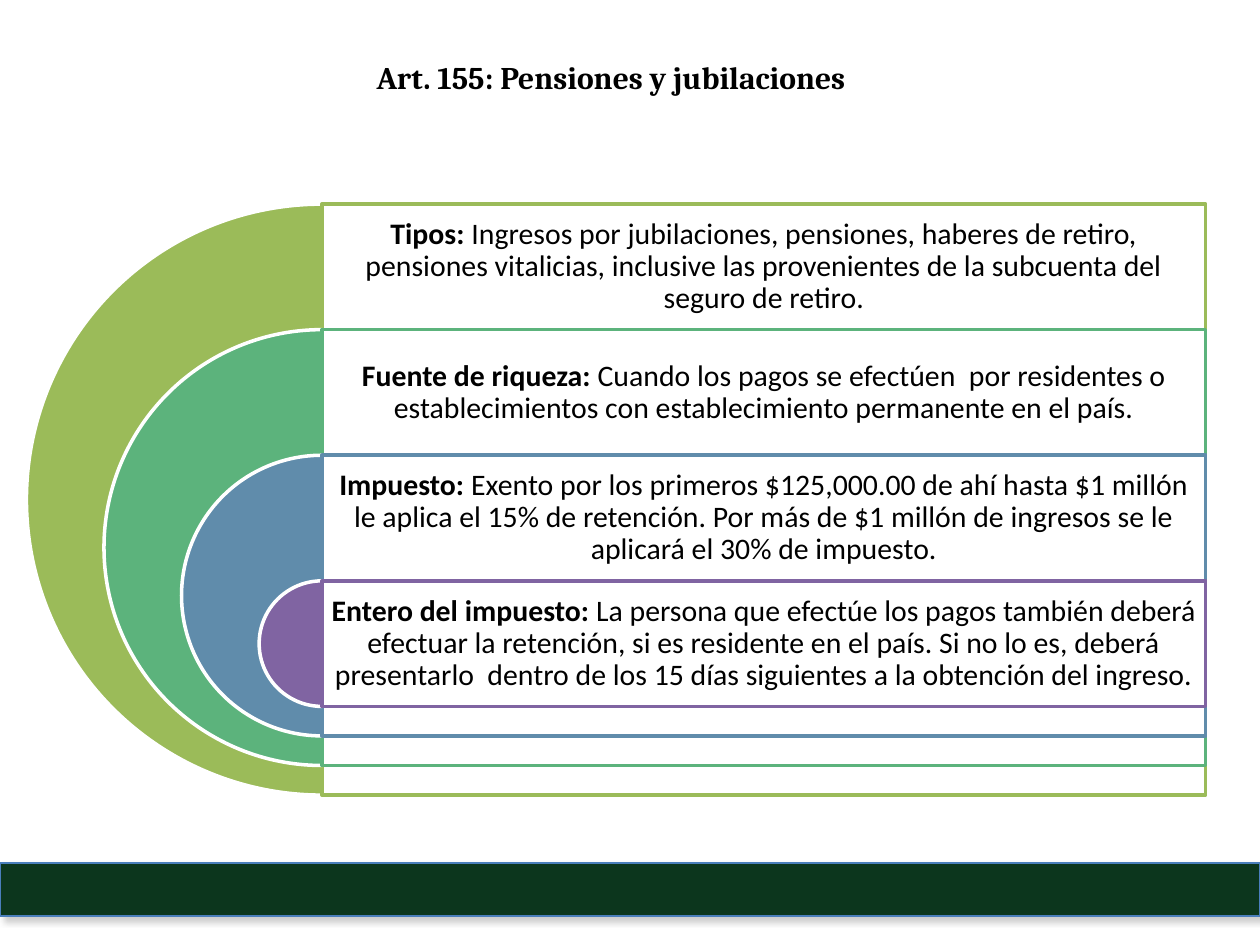
import pptx
import pptx.dml.color
import pptx.enum.shapes
import pptx.enum.text
import pptx.oxml
import pptx.oxml.ns
import pptx.util
from pptx.util import Inches

COLORS = {
    "bar": "0C361D", "bar_line": "4A7EBB", "shadow": "808080",
    "white": "FFFFFF", "text": "000000",
    "types": "9BBB59", "source": "5CB37C", "tax": "608CAB", "payment": "8064A2",
}
RINGS = [
    ("types", "Tipos: ", "Ingresos por jubilaciones, pensiones, haberes de retiro, "
     "pensiones vitalicias, inclusive las provenientes de la subcuenta del seguro de retiro."),
    ("source", "Fuente de riqueza: ", "Cuando los pagos se efectúen  por residentes o "
     "establecimientos con establecimiento permanente en el país."),
    ("tax", "Impuesto: ", "Exento por los primeros $125,000.00 de ahí hasta $1 millón le "
     "aplica el 15% de retención. Por más de $1 millón de ingresos se le aplicará el 30% "
     "de impuesto."),
    ("payment", "Entero del impuesto: ", "La persona que efectúe los pagos también deberá "
     "efectuar la retención, si es residente en el país. Si no lo es, deberá presentarlo  "
     "dentro de los 15 días siguientes a la obtención del ingreso."),
]
BAND_SHARE = 0.2125
RING_SHRINK = 0.2625
SHAPES = pptx.enum.shapes.MSO_SHAPE


def rgb(name):
    """Return the named palette colour."""
    return pptx.dml.color.RGBColor.from_string(COLORS[name])


def add_block(slide, kind, box, fill, line, width):
    """Add a filled and outlined preset shape without a shadow."""
    shape = slide.shapes.add_shape(kind, *box)
    shape.shadow.inherit = False
    shape.fill.solid()
    shape.fill.fore_color.rgb = rgb(fill)
    shape.line.color.rgb = rgb(line)
    shape.line.width = pptx.util.Pt(width)
    return shape


def add_text(slide, box, spans, *, font, size, inset=None, spacing=None, anchor="TOP"):
    """Add a centred paragraph made of (text, bold) spans."""
    frame = slide.shapes.add_textbox(*box).text_frame
    frame.word_wrap = True
    frame.vertical_anchor = getattr(pptx.enum.text.MSO_ANCHOR, anchor)
    if inset is not None:
        frame.margin_left = frame.margin_right = inset
        frame.margin_top = frame.margin_bottom = inset
    para = frame.paragraphs[0]
    para.alignment = pptx.enum.text.PP_ALIGN.CENTER
    para.line_spacing = spacing
    for text, bold in spans:
        span = para.add_run()
        span.text = text
        span.font.name = font
        span.font.size = pptx.util.Pt(size)
        span.font.bold = bold
        span.font.color.rgb = rgb("text")


def set_alpha(shape, percent):
    """Set the opacity of a shape's solid fill."""
    color = shape.fill._xPr.find(".//" + pptx.oxml.ns.qn("a:srgbClr"))
    color.append(pptx.oxml.parse_xml(
        f'<a:alpha {pptx.oxml.ns.nsdecls("a")} val="{percent * 1000}"/>'))


def add_footer(slide, box):
    """Draw the dark bar with its soft shadow."""
    bar = add_block(slide, SHAPES.RECTANGLE, box, "bar", "bar_line", 0.75)
    effects = bar._element.spPr.find(pptx.oxml.ns.qn("a:effectLst"))
    effects.append(pptx.oxml.parse_xml(
        f'<a:outerShdw {pptx.oxml.ns.nsdecls("a")} blurRad="{pptx.util.Pt(4)}" '
        f'dist="{pptx.util.Pt(3)}" dir="2700000" rotWithShape="0">'
        f'<a:srgbClr val="{COLORS["shadow"]}"><a:alpha val="40000"/></a:srgbClr>'
        '</a:outerShdw>'))


def add_title(slide, box):
    """Write the slide heading."""
    add_text(slide, box, [("Art. 155: Pensiones y jubilaciones", True)],
             font="Cambria", size=18)


def add_rings(slide, box):
    """Draw the nested half circles, each with its framed description."""
    left, top, width, height = box
    center = left + height // 2
    panel_width = left + width - center
    band = int(height * BAND_SHARE)
    for index, (color, label, detail) in enumerate(RINGS):
        size = int(height * (1 - RING_SHRINK * index))
        ring_top = top + band * index
        pie = add_block(slide, SHAPES.PIE, (center - size // 2, ring_top, size, size),
                        color, "white", 2)
        pie.adjustments[0] = 54
        pie.adjustments[1] = 162
        panel = add_block(slide, SHAPES.RECTANGLE, (center, ring_top, panel_width, size),
                          "white", color, 2)
        set_alpha(panel, 90)
        add_text(slide, (center, ring_top, panel_width, band),
                 [(label, True), (detail, False)], font="Calibri", size=17,
                 inset=Inches(0.07), spacing=0.9, anchor="MIDDLE")


def main():
    """Build and save the slide."""
    deck = pptx.Presentation()
    deck.slide_width, deck.slide_height = Inches(10), Inches(7.5)
    slide = deck.slides.add_slide(deck.slide_layouts[6])
    add_footer(slide, (Inches(0), Inches(6.85), Inches(10), Inches(0.42)))
    add_title(slide, (Inches(0.36), Inches(0.41), Inches(8.98), Inches(0.4)))
    add_rings(slide, (Inches(0.21), Inches(1.62), Inches(9.36), Inches(4.69)))
    deck.save("out.pptx")


if __name__ == "__main__":
    main()
